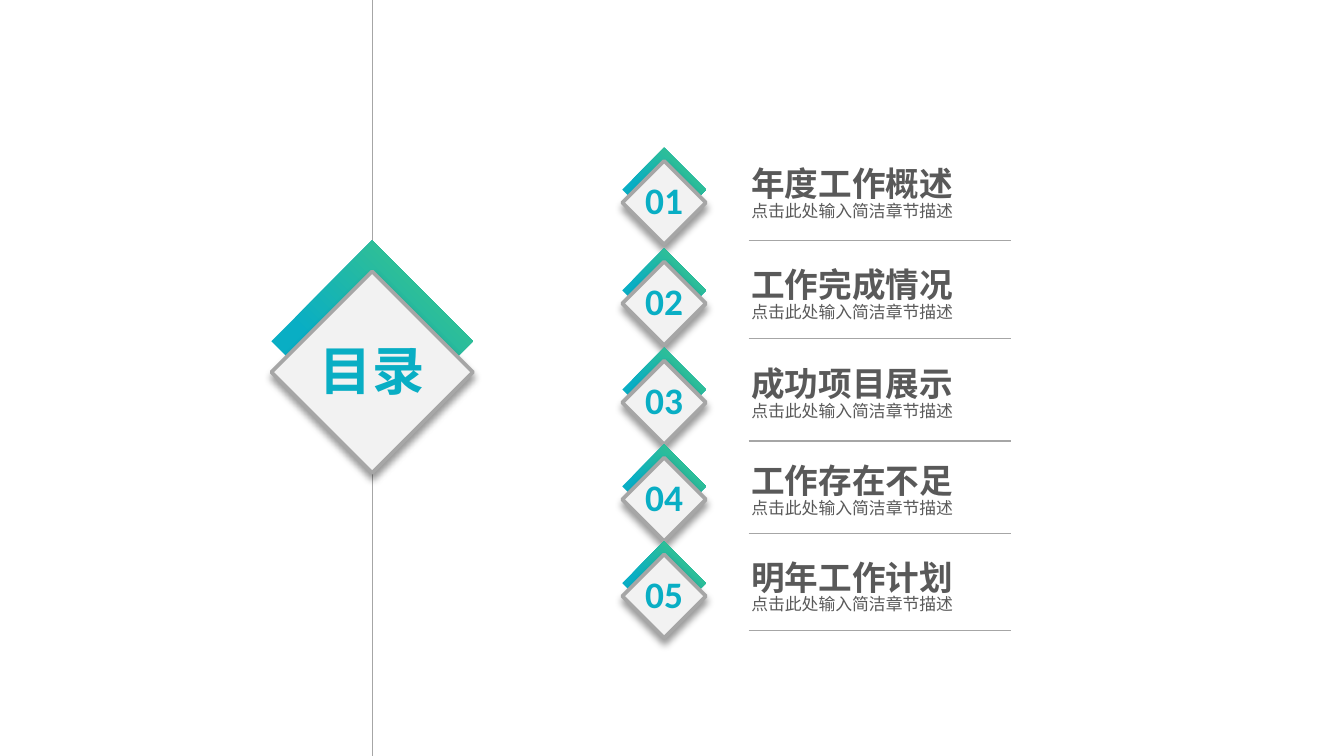
from lxml.etree import SubElement
from pptx import Presentation
from pptx.dml.color import RGBColor
from pptx.enum.shapes import MSO_CONNECTOR, MSO_SHAPE
from pptx.enum.text import MSO_ANCHOR, MSO_AUTO_SIZE, PP_ALIGN
from pptx.oxml import parse_xml
from pptx.oxml.ns import nsdecls, qn
from pptx.util import Pt

TEAL = RGBColor(0x09, 0xAE, 0xC4)
GREEN = RGBColor(0x45, 0xC8, 0x7C)
PALE = RGBColor(0xF2, 0xF2, 0xF2)
GREY = RGBColor(0xA6, 0xA6, 0xA6)
DARK = RGBColor(0x59, 0x59, 0x59)
CJK = "Noto Sans CJK SC"
LATIN = "Calibri"

SLIDE_WIDTH, SLIDE_HEIGHT = 720, 405
SUMMARY = "点击此处输入简洁章节描述"
CHAPTERS = [
    ("年度工作概述", 79.2, 128.9),
    ("工作完成情况", 133.2, 181.4),
    ("成功项目展示", 186.3, 236.2),
    ("工作存在不足", 238.2, 285.8),
    ("明年工作计划", 290, 337.8),
]


def write(paragraph, text, *, size, color, font=CJK, bold=False,
          align=PP_ALIGN.LEFT, spacing=None):
    paragraph.alignment = align
    if spacing:
        paragraph.line_spacing = spacing
    run = paragraph.add_run()
    run.text = text
    run.font.size = Pt(size)
    run.font.bold = bold
    run.font.color.rgb = color
    run.font.name = font
    SubElement(run._r.get_or_add_rPr(), qn("a:ea")).set("typeface", font)


def prepare_frame(holder, anchor=MSO_ANCHOR.TOP):
    frame = holder.text_frame
    frame.word_wrap = False
    frame.auto_size = MSO_AUTO_SIZE.NONE
    frame.vertical_anchor = anchor
    return frame


def add_rule(shapes, x1, y1, x2, y2):
    rule = shapes.add_connector(MSO_CONNECTOR.STRAIGHT,
                                Pt(x1), Pt(y1), Pt(x2), Pt(y2))
    rule.line.color.rgb = GREY
    rule.line.width = Pt(0.75)
    SubElement(rule._element.spPr, qn("a:effectLst"))


def add_diamonds(shapes, left, top, side, drop):
    back, front = [
        shapes.add_shape(MSO_SHAPE.FLOWCHART_DECISION,
                         Pt(left), Pt(y), Pt(side), Pt(side))
        for y in (top, top + drop)
    ]
    back.shadow.inherit = False
    back.line.fill.background()
    back.fill.gradient()
    back.fill.gradient_angle = 45
    for stop, color, position in zip(back.fill.gradient_stops,
                                     (TEAL, GREEN), (0.35, 1)):
        stop.color.rgb = color
        stop.position = position

    front.fill.solid()
    front.fill.fore_color.rgb = PALE
    front.line.color.rgb = GREY
    front.line.width = Pt(2)
    front._element.spPr.append(parse_xml(
        f'<a:effectLst {nsdecls("a")}>'
        f'<a:outerShdw blurRad="{Pt(4)}" dist="{Pt(3)}" dir="5400000" '
        'algn="t" rotWithShape="0"><a:srgbClr val="000000">'
        '<a:alpha val="40000"/></a:srgbClr></a:outerShdw></a:effectLst>'))


def add_heading(slide, left, top, side):
    center = left + side / 2
    add_rule(slide.shapes, center, 0, center, SLIDE_HEIGHT)
    add_diamonds(slide.shapes, left, top, side, 16.6)
    title = slide.shapes.title
    title.left, title.top = Pt(left), Pt(top + 48.8)
    title.width, title.height = Pt(side), Pt(41)
    frame = prepare_frame(title, MSO_ANCHOR.MIDDLE)
    write(frame.paragraphs[0], "目录", size=28, color=TEAL, bold=True,
          align=PP_ALIGN.CENTER)
    slide.shapes._spTree.append(title._element)


def add_badge(shapes, number, left, top, side):
    badge = shapes.add_group_shape().shapes
    add_diamonds(badge, left, top, side, 7)
    label = badge.add_textbox(Pt(left), Pt(top + 12.4), Pt(side), Pt(31.7))
    write(prepare_frame(label).paragraphs[0], f"{number:02d}", size=20,
          color=TEAL, font=LATIN, bold=True, align=PP_ALIGN.CENTER)


def add_chapter(shapes, number, name, left, top, rule_y):
    add_badge(shapes, number, left, top, 44.8)
    entry = shapes.add_textbox(Pt(left + 62), Pt(top + 8.3), Pt(124), Pt(40.3))
    frame = prepare_frame(entry)
    write(frame.paragraphs[0], name, size=18, color=DARK, bold=True,
          spacing=0.84)
    write(frame.add_paragraph(), SUMMARY, size=9, color=DARK, spacing=0.84)
    add_rule(shapes, left + 67.7, rule_y, left + 208.1, rule_y)


def main():
    deck = Presentation()
    deck.slide_width, deck.slide_height = Pt(SLIDE_WIDTH), Pt(SLIDE_HEIGHT)
    slide = deck.slides.add_slide(deck.slide_layouts[5])
    add_heading(slide, 145.4, 128.8, 108)
    for number, (name, top, rule_y) in enumerate(CHAPTERS, 1):
        add_chapter(slide.shapes, number, name, 333.4, top, rule_y)
    deck.save("out.pptx")


if __name__ == "__main__":
    main()
